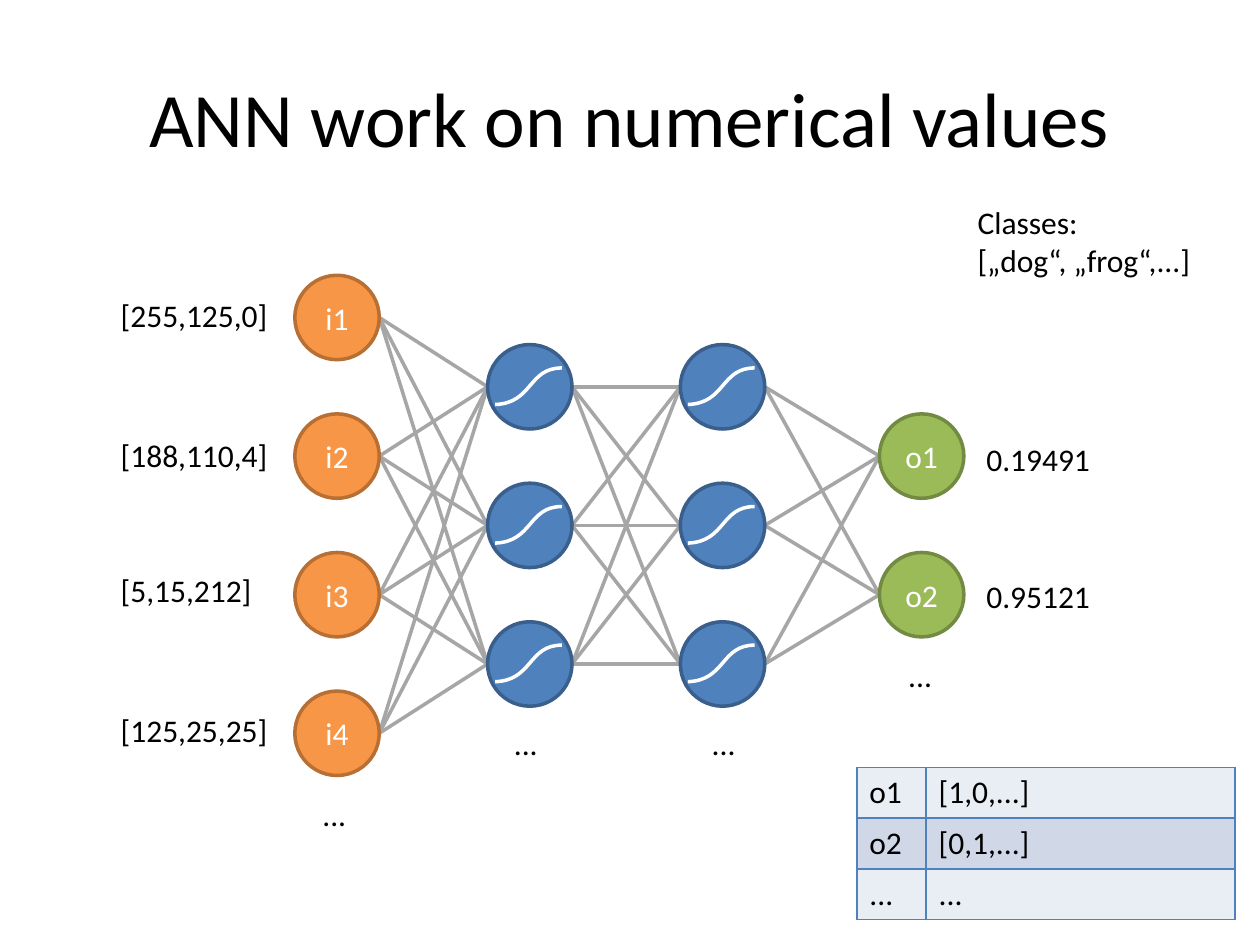
from lxml import etree
from pptx import Presentation
from pptx.dml.color import RGBColor
from pptx.enum.shapes import MSO_CONNECTOR, MSO_SHAPE
from pptx.enum.text import MSO_ANCHOR, MSO_AUTO_SIZE, PP_ALIGN
from pptx.oxml import parse_xml
from pptx.oxml.ns import nsdecls, qn
from pptx.util import Inches, Pt

STRAIGHT = MSO_CONNECTOR.STRAIGHT
OVAL = MSO_SHAPE.OVAL
MIDDLE = MSO_ANCHOR.MIDDLE
FIT_TEXT = MSO_AUTO_SIZE.SHAPE_TO_FIT_TEXT
LEFT, CENTER = PP_ALIGN.LEFT, PP_ALIGN.CENTER


def paint(fill, color):
    fill.solid()
    fill.fore_color.rgb = RGBColor.from_string(color)


def write_text(text_frame, text, size=18, color="000000", align=LEFT):
    text_frame.text = text
    for paragraph in text_frame.paragraphs:
        paragraph.alignment = align
        paragraph.font.size = Pt(size)
        paragraph.font.name = "Calibri"
        paint(paragraph.font.fill, color)


presentation = Presentation()
presentation.slide_width = Inches(10)
presentation.slide_height = Inches(7.5)
slide = presentation.slides.add_slide(presentation.slide_layouts[5])

title = slide.shapes.title
title.left, title.top = Inches(0.5), Inches(0.3)
title.width, title.height = Inches(9), Inches(1.25)
title.text_frame.vertical_anchor = MIDDLE
write_text(title.text_frame, "ANN work on numerical values", size=44, align=CENTER)

NODE_SIZE = 0.67
NODE_PITCH = 1.1
MIDDLE_Y = 4.17
layers = [
    (2.34, ["i1", "i2", "i3", "i4"], "F79646", "B76F34"),
    (3.87, ["", "", ""], "4F81BD", "3A5F8C"),
    (5.4, ["", "", ""], "4F81BD", "3A5F8C"),
    (6.98, ["o1", "o2"], "9BBB59", "738A42"),
]
layer_centers = [
    [MIDDLE_Y + (row - (len(names) - 1) / 2) * NODE_PITCH for row in range(len(names))]
    for left, names, fill_color, line_color in layers
]

network = slide.shapes.add_group_shape()
for index in range(len(layers) - 1):
    start_x = layers[index][0] + NODE_SIZE
    end_x = layers[index + 1][0]
    for start_y in layer_centers[index]:
        for end_y in layer_centers[index + 1]:
            connector = network.shapes.add_connector(
                STRAIGHT, Inches(start_x), Inches(start_y), Inches(end_x), Inches(end_y)
            )
            paint(connector.line.fill, "A6A6A6")
            connector.line.width = Pt(2)
            etree.SubElement(connector._element.spPr, qn("a:effectLst"))

CURVE_POINTS = [(0.3, 0.28), (0.26, 0), (0.53, 0)]
for (left, names, fill_color, line_color), centers in zip(layers, layer_centers):
    for name, center_y in zip(names, centers):
        node = network.shapes.add_shape(
            OVAL, Inches(left), Inches(center_y - NODE_SIZE / 2), Inches(NODE_SIZE), Inches(NODE_SIZE)
        )
        node.shadow.inherit = False
        paint(node.fill, fill_color)
        paint(node.line.fill, line_color)
        node.line.width = Pt(2)
        if name:
            node.text_frame.vertical_anchor = MIDDLE
            write_text(node.text_frame, name, color="FFFFFF", align=CENTER)
            continue
        builder = network.shapes.build_freeform(Inches(left + 0.06), Inches(center_y + 0.14))
        builder.add_line_segments([(Inches(left + 0.59), Inches(center_y - 0.15))], close=False)
        sigmoid = builder.convert_to_shape()
        segment = sigmoid._element.find(".//" + qn("a:lnTo"))
        segment.tag = qn("a:cubicBezTo")
        segment.clear()
        for x, y in CURVE_POINTS:
            etree.SubElement(segment, qn("a:pt"), x=str(Inches(x)), y=str(Inches(y)))
        sigmoid.shadow.inherit = False
        sigmoid.fill.background()
        paint(sigmoid.line.fill, "FFFFFF")
        sigmoid.line.width = Pt(2)

labels = [
    ("[255,125,0]", 0.86, 2.3, 1.38, 0.4),
    ("[188,110,4]", 0.86, 3.41, 1.38, 0.4),
    ("[5,15,212]", 0.86, 4.48, 1.25, 0.4),
    ("[125,25,25]", 0.86, 5.59, 1.38, 0.4),
    ("...", 2.46, 6.26, 0.39, 0.4),
    ("...", 3.98, 5.7, 0.39, 0.4),
    ("...", 5.55, 5.7, 0.39, 0.4),
    ("...", 7.11, 5.16, 0.39, 0.4),
    ("0.19491", 7.73, 3.44, 1.03, 0.4),
    ("0.95121", 7.73, 4.53, 1.03, 0.4),
    ("Classes:\n[„dog“, „frog“,...]", 7.66, 1.56, 1.91, 0.71),
]
for text, left, top, width, height in labels:
    label = slide.shapes.add_textbox(Inches(left), Inches(top), Inches(width), Inches(height))
    label.text_frame.word_wrap = False
    label.text_frame.auto_size = FIT_TEXT
    write_text(label.text_frame, text)

encodings = [("o1", "[1,0,...]"), ("o2", "[0,1,...]"), ("...", "...")]
table = slide.shapes.add_table(
    len(encodings), 2, Inches(6.8), Inches(6.09), Inches(3), Inches(1.21)
).table
table.first_row = False
table.horz_banding = False
for column, width in zip(table.columns, [0.55, 2.45]):
    column.width = Inches(width)
for row_index, encoding in enumerate(encodings):
    table.rows[row_index].height = Inches(1.21 / len(encodings))
    for column_index, text in enumerate(encoding):
        cell = table.cell(row_index, column_index)
        write_text(cell.text_frame, text)
        for side in ("lnL", "lnR", "lnT", "lnB"):
            cell._tc.get_or_add_tcPr().append(parse_xml(
                f'<a:{side} {nsdecls("a")} w="12700"><a:solidFill>'
                f'<a:srgbClr val="4F81BD"/></a:solidFill></a:{side}>'
            ))
        paint(cell.fill, ["E9EDF4", "D0D8E8"][row_index % 2])

presentation.save("out.pptx")
